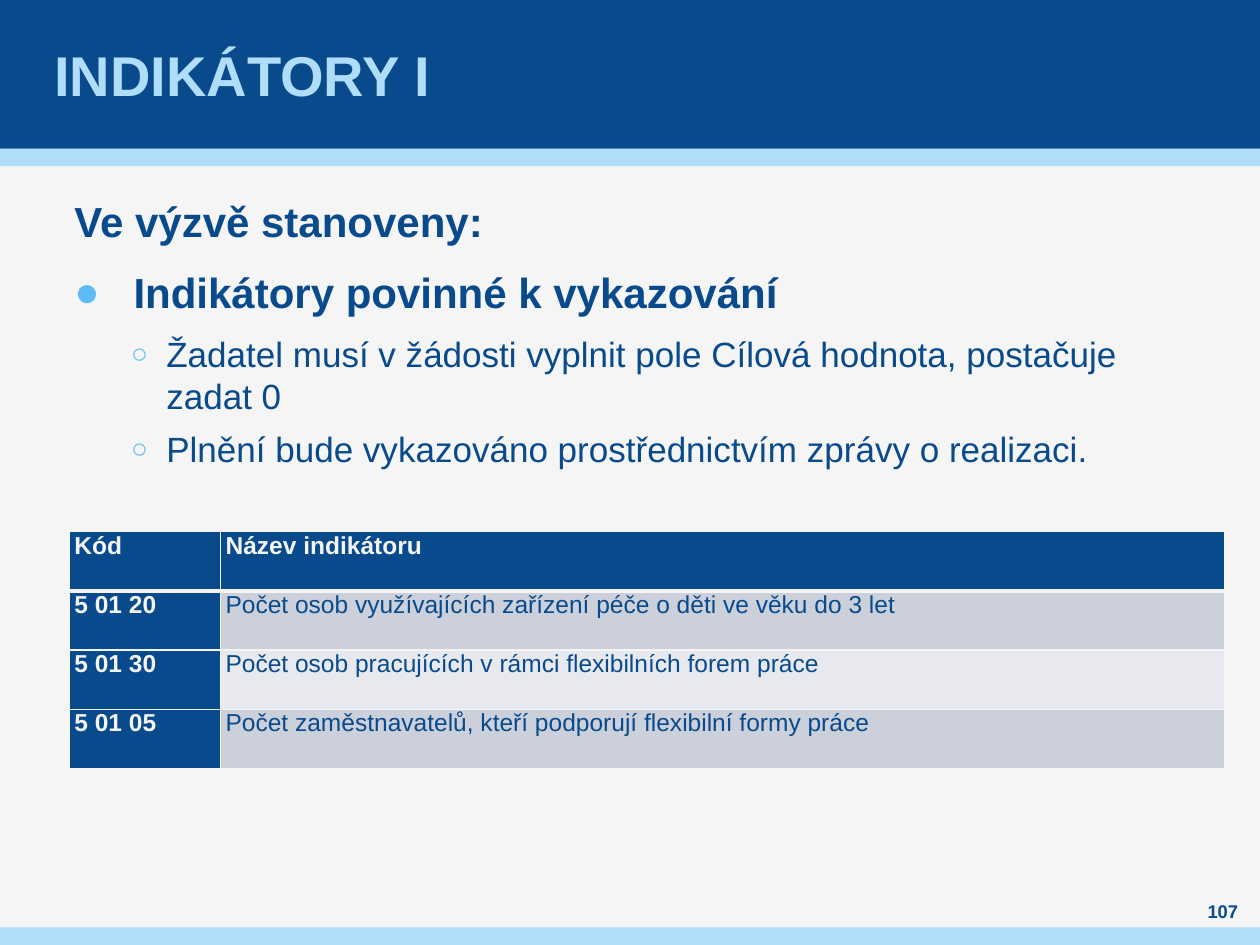
"""Build the slide on mandatory indicators with its bullet list and table."""
from lxml import etree
from pptx import Presentation
from pptx.dml.color import RGBColor
from pptx.enum.shapes import MSO_SHAPE
from pptx.enum.text import MSO_ANCHOR, PP_ALIGN
from pptx.oxml import parse_xml
from pptx.oxml.ns import nsdecls, qn
from pptx.util import Inches, Pt

NAVY, SKY, PALE, ACCENT = "084A8B", "AFDDFA", "F5F5F5", "5FBBF5"


def rgb(value):
    return RGBColor.from_string(value)


def write(p, text, size, color, bold, **fmt):
    r = p.add_run()
    r.text = text
    for name, value in {"name": "Arial", "size": Pt(size), "bold": bold}.items():
        setattr(r.font, name, value)
    r.font.color.rgb = rgb(color)
    for name, value in fmt.items():
        setattr(p, name, value)


prs = Presentation()
prs.slide_width, prs.slide_height = Inches(10), Inches(7.5)
s = prs.slides.add_slide(prs.slide_layouts[6])
s.background.fill.solid()
s.background.fill.fore_color.rgb = rgb(PALE)

for top, height, color in [(1.18, 0.14, SKY), (0, 1.18, NAVY), (7.36, 0.14, SKY)]:
    sp = s.shapes.add_shape(MSO_SHAPE.RECTANGLE, 0, Inches(top), Inches(10), Inches(height))
    sp.shadow.inherit = False
    sp.fill.solid()
    sp.fill.fore_color.rgb = rgb(color)
    sp.line.fill.background()

frames = []
for box, inset, anchor in [
    ((0.39, 0, 9.21, 1.18), 0.04, MSO_ANCHOR.MIDDLE),
    ((0.59, 1.55, 8.82, 5.15), 0, MSO_ANCHOR.TOP),
    ((9.45, 7.13, 0.51, 0.2), 0, MSO_ANCHOR.MIDDLE),
]:
    tf = s.shapes.add_textbox(*[Inches(v) for v in box]).text_frame
    fmt = {"word_wrap": True, "vertical_anchor": anchor, "margin_top": 0, "margin_bottom": 0,
           "margin_left": Inches(inset), "margin_right": Inches(inset)}
    for name, value in fmt.items():
        setattr(tf, name, value)
    frames.append(tf)
title, body, number = frames

write(title.paragraphs[0], "INDIKÁTORY I", 32, SKY, True)
write(number.paragraphs[0], "107", 10.5, NAVY, True, alignment=PP_ALIGN.CENTER)

head = {"size": 24, "bold": True, "line_spacing": Pt(28.8), "space_before": Pt(6), "space_after": Pt(6)}
item = {"size": 20, "bold": False, "line_spacing": Pt(24), "space_before": Pt(3), "space_after": Pt(3), "level": 1}
for i, (text, fmt, bullet, left, hang, percent) in enumerate([
    ("Ve výzvě stanoveny:", head, None, 0, 0, 100),
    ("Indikátory povinné k vykazování", head, "●", 0.47, 0.47, 100),
    ("Žadatel musí v žádosti vyplnit pole Cílová hodnota, postačuje zadat 0", item, "○", 0.73, 0.28, 80),
    ("Plnění bude vykazováno prostřednictvím zprávy o realizaci.", item, "○", 0.73, 0.28, 80),
]):
    p = body.add_paragraph() if i else body.paragraphs[0]
    write(p, text, color=NAVY, **fmt)
    if bullet:
        pPr = p._p.get_or_add_pPr()
        pPr.set("marL", str(Inches(left)))
        pPr.set("indent", str(-Inches(hang)))
        color = etree.SubElement(pPr, qn("a:buClr"))
        etree.SubElement(color, qn("a:srgbClr"), val=ACCENT)
        etree.SubElement(pPr, qn("a:buSzPct"), val=str(percent * 1000))
        etree.SubElement(pPr, qn("a:buFont"), typeface="Arial")
        etree.SubElement(pPr, qn("a:buChar"), char=bullet)

rows = [
    ("Kód", "Název indikátoru"),
    ("5 01 20", "Počet osob využívajících zařízení péče o děti ve věku do 3 let"),
    ("5 01 30", "Počet osob pracujících v rámci flexibilních forem práce"),
    ("5 01 05", "Počet zaměstnavatelů, kteří podporují flexibilní formy práce"),
]
table = s.shapes.add_table(4, 2, Inches(0.55), Inches(4.22), Inches(9.17), Inches(1.88)).table
for col, width in zip(table.columns, (1.2, 7.97)):
    col.width = Inches(width)
for i, texts in enumerate(rows):
    table.rows[i].height = Inches(0.47)
    for j, text in enumerate(texts):
        cell = table.cell(i, j)
        for side in ("left", "right", "top", "bottom"):
            setattr(cell, f"margin_{side}", 0)
        dark = i == 0 or j == 0
        p = cell.text_frame.paragraphs[0]
        write(p, text, 14, PALE if dark else NAVY, dark,
              space_before=Pt(3), space_after=Pt(0 if i else 3))
        p._p.get_or_add_pPr().set("marL", str(Inches(0.04)))
        for side in "LRTB":
            thick = (i, side) in [(0, "B"), (1, "T")]
            cell._tc.get_or_add_tcPr().append(parse_xml(
                f'<a:ln{side} {nsdecls("a")} w="{Pt(3 if thick else 1)}"><a:solidFill>'
                f'<a:srgbClr val="{PALE}"/></a:solidFill></a:ln{side}>'))
        cell.fill.solid()
        cell.fill.fore_color.rgb = rgb(NAVY if dark else "CCD0DA" if i % 2 else "E7E9EE")

prs.save("out.pptx")
